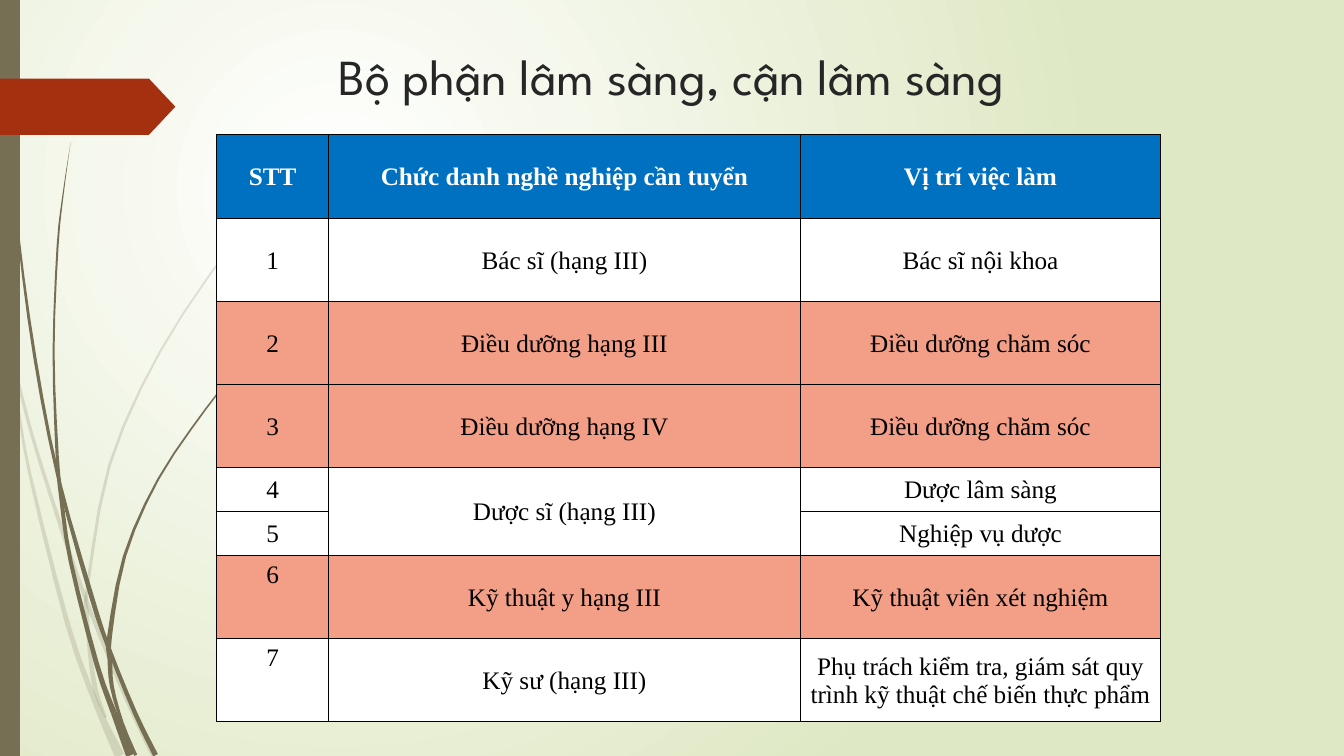
import dataclasses
import typing

import lxml.etree
import pptx
import pptx.dml.color
import pptx.enum.shapes
import pptx.enum.text
import pptx.oxml.ns
import pptx.util

Cm = pptx.util.Cm
Pt = pptx.util.Pt
qn = pptx.oxml.ns.qn
SHAPE = pptx.enum.shapes.MSO_SHAPE


@dataclasses.dataclass(frozen=True)
class Theme:
    title_font: str = "League Spartan"
    table_font: str = "Times New Roman"
    title_size: int = 36
    table_size: int = 18
    title: str = "262626"
    text: str = "000000"
    white: str = "FFFFFF"
    header: str = "0070C0"
    highlight: str = "F39E87"
    grass: str = "766F54"
    arrow: str = "A53010"
    backdrop: str = "DFE8C4"


class Knot(typing.NamedTuple):
    x: float
    y: float
    width: float


class Blade(typing.NamedTuple):
    """A blade of grass in cm, cut into strips at the knots numbered in seams."""
    opacity: int
    seams: tuple[int, ...]
    knots: list[Knot]


class Row(typing.NamedTuple):
    height: float
    texts: tuple[str, str, str]
    fill: str
    color: str = "000000"
    bold: bool = False
    number_on_top: bool = False


THEME = Theme()
COLUMN_WIDTHS = (2.82, 11.89, 9.08)
TALL, SHORT = 2.09, 1.11
ROWS = [
    Row(2.13, ("STT", "Chức danh nghề nghiệp cần tuyển", "Vị trí việc làm"), THEME.header, THEME.white, True),
    Row(TALL, ("1", "Bác sĩ (hạng III)", "Bác sĩ nội khoa"), THEME.white),
    Row(TALL, ("2", "Điều dưỡng hạng III", "Điều dưỡng chăm sóc"), THEME.highlight),
    Row(TALL, ("3", "Điều dưỡng hạng IV", "Điều dưỡng chăm sóc"), THEME.highlight),
    Row(SHORT, ("4", "Dược sĩ (hạng III)", "Dược lâm sàng"), THEME.white),
    Row(SHORT, ("5", "", "Nghiệp vụ dược"), THEME.white),
    Row(TALL, ("6", "Kỹ thuật y hạng III", "Kỹ thuật viên xét nghiệm"), THEME.highlight, number_on_top=True),
    Row(TALL, ("7", "Kỹ sư (hạng III)", "Phụ trách kiểm tra, giám sát quy trình kỹ thuật chế biến thực phẩm"),
        THEME.white, number_on_top=True),
]
BLADES = [
    Blade(20, (1, 4), [
        Knot(0, 7.38, .1), Knot(.25, 8.69, .08), Knot(.76, 10.8, .08), Knot(1.52, 13.23, .1),
        Knot(2.2, 15.2, .1), Knot(3.18, 17.6, .1), Knot(3.87, 19.05, .12)]),
    Blade(20, (4,), [
        Knot(.28, 8.89, 0), Knot(.45, 10.16, .05), Knot(.75, 11.94, .08), Knot(1.71, 15.75, .12),
        Knot(2.45, 17.8, .15), Knot(3.02, 19.05, .25)]),
    Blade(20, (5, 6), [
        Knot(7.92, 3.89, 0), Knot(6.82, 5.02, .02), Knot(5.8, 6.21, .04), Knot(4.04, 8.85, .05),
        Knot(2.76, 11.72, .07), Knot(2.2, 14.83, .08), Knot(2.19, 15.4, .1), Knot(2.26, 16.41, .1),
        Knot(2.41, 17.4, .12), Knot(2.67, 18.08, .05)]),
    Blade(100, (5, 7), [
        Knot(.09, 0, .02), Knot(.11, 1.22, .02), Knot(.19, 2.78, .03), Knot(.46, 5.91, .05),
        Knot(.88, 9.02, .08), Knot(1.46, 12, .08), Knot(2.3, 15.01, .12), Knot(2.74, 16.33, .1),
        Knot(3.4, 17.96, .11), Knot(3.92, 19.03, .13)]),
    Blade(100, (4, 5, 8), [
        Knot(1.78, 3.58, 0), Knot(1.59, 4.9, .03), Knot(1.45, 6.22, .05), Knot(1.35, 8.86, .05),
        Knot(1.44, 11.46, .08), Knot(1.55, 12.6, .1), Knot(1.78, 14.14, .1), Knot(2.43, 16.71, .12),
        Knot(2.87, 17.96, .15), Knot(3.3, 19.03, .25)]),
    Blade(100, (5, 6, 8), [
        Knot(6.63, 8.74, 0), Knot(5.87, 9.49, .03), Knot(5.19, 10.3, .04), Knot(3.99, 12.07, .05),
        Knot(3.14, 14.01, .08), Knot(2.76, 16.05, .12), Knot(2.77, 16.6, .12), Knot(2.82, 17.3, .1),
        Knot(3.08, 18.22, .08), Knot(3.42, 19.03, .08)]),
]
CURVE_STEPS = 3


def rgb(color: str) -> pptx.dml.color.RGBColor:
    return pptx.dml.color.RGBColor.from_string(color)


def paint(s, color: str, opacity: int = 100) -> None:
    s.shadow.inherit = False
    s.fill.solid()
    s.fill.fore_color.rgb = rgb(color)
    s.line.fill.background()
    if opacity < 100:
        clr = s._element.spPr.find(".//" + qn("a:srgbClr"))
        lxml.etree.SubElement(clr, qn("a:alpha"), val=str(opacity * 1000))


def smooth(knots: list[Knot]) -> list[Knot]:
    """Catmull-Rom curve through the knots."""
    padded = [knots[0], *knots, knots[-1]]
    curve = []
    for span in zip(padded, padded[1:], padded[2:], padded[3:]):
        for t in (i / CURVE_STEPS for i in range(CURVE_STEPS)):
            curve.append(Knot(*(
                q + t * (r - p) / 2 + t * t * (2 * p - 5 * q + 4 * r - s) / 2
                + t ** 3 * (3 * q - p - 3 * r + s) / 2 for p, q, r, s in zip(*span))))
    return curve + [knots[-1]]


def draw_blade(shapes, blade: Blade) -> None:
    curve = smooth(blade.knots)
    left, right = [], []
    for before, k, after in zip(curve[:1] + curve, curve, curve[1:] + curve[-1:]):
        dx, dy = after.x - before.x, after.y - before.y
        half = k.width / 2 / (dx * dx + dy * dy) ** 0.5
        left.append((max(k.x - dy * half, 0) * 1000, (k.y + dx * half) * 1000))
        right.append((max(k.x + dy * half, 0) * 1000, (k.y - dx * half) * 1000))
    cuts = [0, *(seam * CURVE_STEPS for seam in blade.seams), len(curve) - 1]
    for start, end in zip(cuts, cuts[1:]):
        outline = left[start:end + 1] + right[start:end + 1][::-1]
        builder = shapes.build_freeform(*outline[0], scale=Cm(1) / 1000)
        builder.add_line_segments(outline[1:], close=True)
        paint(builder.convert_to_shape(), THEME.grass, blade.opacity)


def set_background(slide) -> None:
    fill = slide.background.fill
    fill.gradient()
    for stop, color in zip(fill.gradient_stops, (THEME.white, THEME.backdrop)):
        stop.color.rgb = rgb(color)
    grad = slide._element.find(".//" + qn("a:gradFill"))
    circle = lxml.etree.Element(qn("a:path"), {"path": "circle"})
    lxml.etree.SubElement(circle, qn("a:fillToRect"), l="50000", t="50000", r="100000", b="100000")
    grad.replace(grad.find(qn("a:lin")), circle)


def write(tf, text: str, font: str, size: int, color: str, bold: bool = False) -> None:
    p = tf.paragraphs[0]
    p.alignment = pptx.enum.text.PP_ALIGN.CENTER
    r = p.add_run()
    r.text = text
    r.font.name, r.font.size, r.font.bold = font, Pt(size), bold
    r.font.color.rgb = rgb(color)


def set_borders(cell) -> None:
    for i, side in enumerate(("lnL", "lnR", "lnT", "lnB")):
        ln = lxml.etree.Element(qn(f"a:{side}"), w=str(Pt(1)))
        fill = lxml.etree.SubElement(ln, qn("a:solidFill"))
        lxml.etree.SubElement(fill, qn("a:srgbClr"), val=THEME.text)
        cell._tc.get_or_add_tcPr().insert(i, ln)


def draw_table(shapes) -> None:
    size = Cm(sum(COLUMN_WIDTHS)), Cm(sum(row.height for row in ROWS))
    table = shapes.add_table(len(ROWS), len(COLUMN_WIDTHS), Cm(5.46), Cm(3.38), *size).table
    for column, width in zip(table.columns, COLUMN_WIDTHS):
        column.width = Cm(width)
    for i, row in enumerate(ROWS):
        table.rows[i].height = Cm(row.height)
        for j, text in enumerate(row.texts):
            cell = table.cell(i, j)
            cell.fill.solid()
            cell.fill.fore_color.rgb = rgb(row.fill)
            set_borders(cell)
            if not (row.number_on_top and j == 0):
                cell.vertical_anchor = pptx.enum.text.MSO_ANCHOR.MIDDLE
                cell.margin_left = cell.margin_right = cell.margin_top = Cm(.03)
                cell.margin_bottom = 0
            if text:
                write(cell.text_frame, text, THEME.table_font, THEME.table_size, row.color, row.bold)
    table.cell(4, 1).merge(table.cell(5, 1))


def main() -> None:
    prs = pptx.Presentation()
    prs.slide_width, prs.slide_height = Cm(33.87), Cm(19.05)
    slide = prs.slides.add_slide(prs.slide_layouts.get_by_name("Title Only"))
    shapes = slide.shapes
    set_background(slide)
    for blade in BLADES:
        draw_blade(shapes, blade)
    paint(shapes.add_shape(SHAPE.RECTANGLE, 0, 0, Cm(.5), Cm(19.05)), THEME.grass)
    arrow = shapes.add_shape(SHAPE.PENTAGON, 0, Cm(1.98), Cm(4.42), Cm(1.42))
    arrow.adjustments[0] = .47
    paint(arrow, THEME.arrow)
    title = shapes.title
    title.left, title.top, title.width, title.height = Cm(2.32), Cm(1.02), Cm(29.21), Cm(2.54)
    title.text_frame.auto_size = pptx.enum.text.MSO_AUTO_SIZE.NONE
    title.text_frame.vertical_anchor = pptx.enum.text.MSO_ANCHOR.TOP
    write(title.text_frame, "Bộ phận lâm sàng, cận lâm sàng", THEME.title_font, THEME.title_size, THEME.title)
    draw_table(shapes)
    prs.save("out.pptx")


if __name__ == "__main__":
    main()
